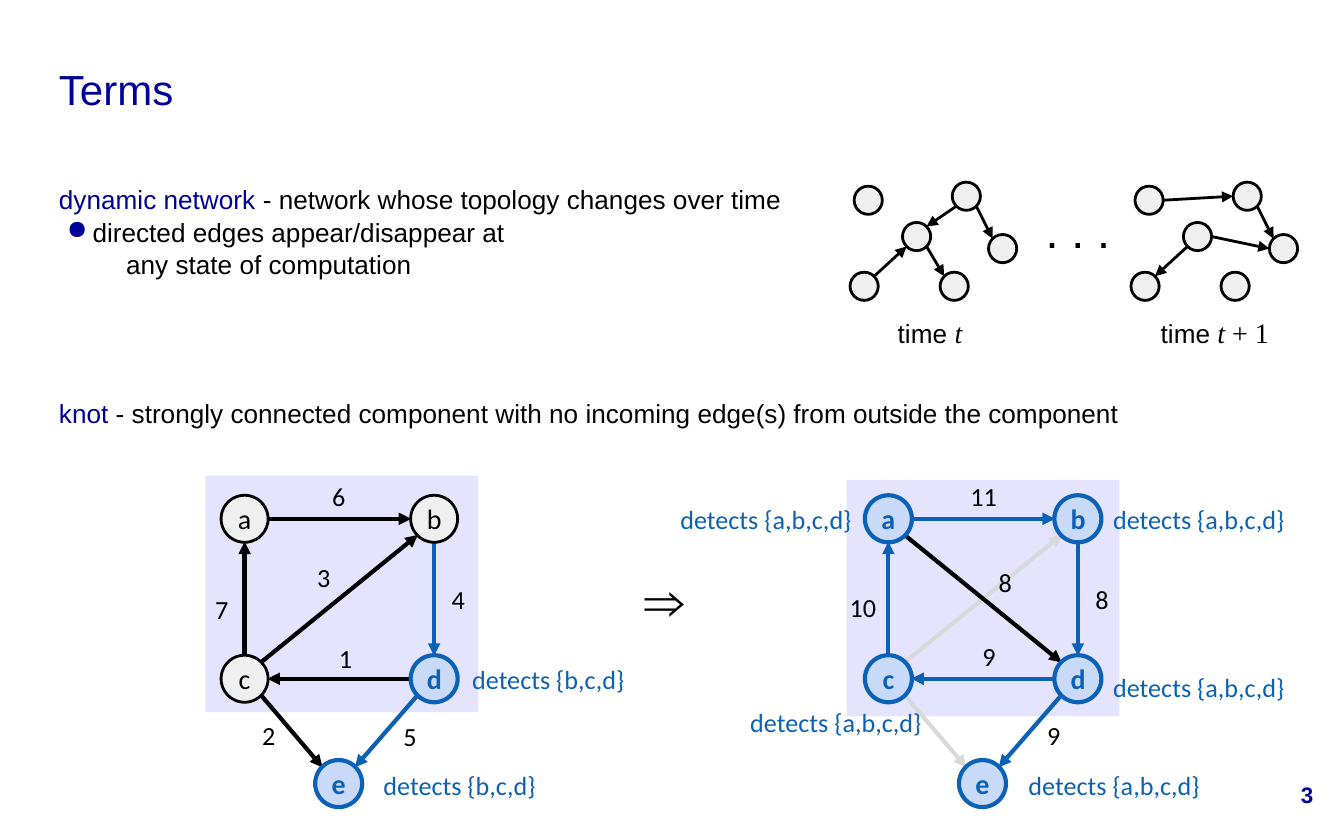
import math

from lxml import etree
from pptx import Presentation
from pptx.dml.color import RGBColor
from pptx.enum.shapes import MSO_CONNECTOR, MSO_SHAPE
from pptx.enum.text import MSO_ANCHOR, PP_ALIGN
from pptx.oxml.ns import qn
from pptx.util import Inches, Pt

OVAL, RECT, STRAIGHT = MSO_SHAPE.OVAL, MSO_SHAPE.RECTANGLE, MSO_CONNECTOR.STRAIGHT
LEFT, CENTER, RIGHT = PP_ALIGN.LEFT, PP_ALIGN.CENTER, PP_ALIGN.RIGHT
TOP, MIDDLE = MSO_ANCHOR.TOP, MSO_ANCHOR.MIDDLE

NAVY, BLACK, BLUE = "000099", "000000", "0B61B5"
GREY, PALE, SKY, LILAC = "D9D9D9", "EFEFEF", "C9DAF8", "E4E4FF"

# Text formats
TITLE = {"name": "Arial", "size": Pt(22.5), "color": NAVY}
TERM = {"name": "Arial", "size": Pt(14), "color": NAVY}
BODY = TERM | {"color": BLACK}
MATH = {"name": "Times New Roman", "size": Pt(15), "color": BLACK}
VARIABLE = MATH | {"italic": True}
DOTS = BODY | {"size": Pt(25)}
IMPLIES = BODY | {"size": Pt(30)}
NUMBER = TERM | {"size": Pt(12), "bold": True}
LABEL = {"name": "Calibri", "size": Pt(14), "color": BLACK}
DETECT = LABEL | {"color": BLUE}
PLAIN_NODE = LABEL | {"size": Pt(15)}
KNOT_NODE = DETECT | {"size": Pt(15), "bold": True}

# Definitions: spans, left margin, first-line indent, bullet, space before in points
DEFINITIONS = [
    ([("dynamic network", TERM), (" - network whose topology changes over time", BODY)], 0, 0, None, 0),
    ([("directed edges appear/disappear at", BODY)], 0.25, -0.19, "●", 0),
    ([("any state of computation", BODY)], 0.5, 0, None, 0),
    ([("knot", TERM), (" - strongly connected component with no incoming edge(s) "
                       "from outside the component", BODY)], 0, 0, None, 62),
]

# Free-standing text: left, top, width, height, spans, alignment, anchor
TEXTS = [
    (0.34, 0.31, 9.32, 0.7, [("Terms", TITLE)], LEFT, MIDDLE),
    (9.27, 5.67, 0.6, 0.48, [("3", NUMBER)], RIGHT, MIDDLE),
    (4.09, 4.16, 1.71, 0.59, [("⇒", IMPLIES)], CENTER, MIDDLE),
    (7.66, 1.4, 0.72, 0.62, [(". . .", DOTS)], CENTER, TOP),
    (6.34, 2.25, 1.16, 0.45, [("time ", BODY), ("t", VARIABLE)], CENTER, TOP),
    (8.46, 2.25, 1.16, 0.45, [("time ", BODY), ("t", VARIABLE), (" + 1", MATH)], CENTER, TOP),
]

# Dynamic network: node offsets, then origin and edges at each time
SNAPSHOT_NODES = {"p": (0, 0), "q": (0.73, -0.03), "r": (0.36, 0.27),
                  "s": (1, 0.36), "u": (-0.03, 0.64), "v": (0.64, 0.64)}
SNAPSHOTS = [((6.46, 1.49), ["rv", "qr", "qs", "ur"]),
             ((8.55, 1.49), ["ru", "pq", "rs", "qs"])]

# Knot graphs: edges and edge labels by centre, "detects" notes by centre
KNOT_NODES = {"a": (0, 0), "b": (1.41, 0), "c": (0, 1.19), "d": (1.41, 1.19), "e": (0.7, 1.97)}
KNOT_GRAPHS = [
    {"origin": (1.82, 3.86), "area": (1.53, 3.54), "knot": "de",
     "edges": {BLACK: ["dc", "ce", "ca", "ab", "cb"], BLUE: ["bd", "de"]},
     "labels": [("1", 2.57, 4.9), ("2", 2, 5.47), ("3", 2.41, 4.29), ("4", 3.41, 4.46),
                ("5", 3.05, 5.48), ("6", 2.52, 3.69), ("7", 1.65, 4.53)],
     "notes": [("detects {b,c,d}", 4.08, 5.05), ("detects {b,c,d}", 3.42, 5.84)]},
    {"origin": (6.61, 3.86), "area": (6.3, 3.57), "knot": "abcde",
     "edges": {GREY: ["cb", "ce"], BLACK: ["ad"], BLUE: ["ab", "bd", "dc", "ca", "de"]},
     "labels": [("8", 8.2, 4.46), ("8", 7.48, 4.33), ("9", 7.36, 4.88), ("9", 7.84, 5.47),
                ("10", 6.42, 4.52), ("11", 7.32, 3.69)],
     "notes": [("detects {a,b,c,d}", x, y) for x, y in
               [(5.7, 3.86), (8.92, 3.86), (8.92, 5.11), (6.22, 5.37), (8.29, 5.84)]]},
]

deck = Presentation()
deck.slide_width, deck.slide_height = Inches(10), Inches(6.25)
page = deck.slides.add_slide(deck.slide_layouts[6])


def rgb(color):
    return RGBColor.from_string(color)


def add_spans(para, spans):
    for text, style in spans:
        span = para.add_run()
        span.text = text
        for key, value in style.items():
            if key == "color":
                span.font.color.rgb = rgb(value)
            else:
                setattr(span.font, key, value)


def set_frame(frame, anchor, side, edge):
    values = {"word_wrap": True, "vertical_anchor": anchor,
              "margin_left": Inches(side), "margin_right": Inches(side),
              "margin_top": Inches(edge), "margin_bottom": Inches(edge)}
    for key, value in values.items():
        setattr(frame, key, value)


def add_text(left, top, width, height, spans, align, anchor, side=0.1, edge=0.1):
    box = page.shapes.add_textbox(*map(Inches, (left, top, width, height)))
    set_frame(box.text_frame, anchor, side, edge)
    para = box.text_frame.paragraphs[0]
    para.alignment = align
    add_spans(para, spans)
    return box


def add_label(text, x, y, width, style):
    add_text(x - width / 2, y - 0.165, width, 0.33, [(text, style)], CENTER, MIDDLE, 0.07, 0.04)


def add_shape(kind, left, top, width, height, fill, line=None, weight=0):
    shape = page.shapes.add_shape(kind, *map(Inches, (left, top, width, height)))
    shape.shadow.inherit = False
    shape.fill.solid()
    shape.fill.fore_color.rgb = rgb(fill)
    if line:
        shape.line.color.rgb = rgb(line)
        shape.line.width = Pt(weight)
    else:
        shape.line.fill.background()
    return shape


def add_node(center, size, fill, line, weight, name="", style=None):
    x, y = center
    node = add_shape(OVAL, x - size / 2, y - size / 2, size, size, fill, line, weight)
    if name:
        set_frame(node.text_frame, MIDDLE, 0.07, 0.04)
        para = node.text_frame.paragraphs[0]
        para.alignment = CENTER
        add_spans(para, [(name, style)])


def add_edge(start, end, radius, color, weight):
    """Arrow between two circles, touching each at its nearest 45-degree point."""
    (x1, y1), (x2, y2) = start, end
    angle = round(math.atan2(y2 - y1, x2 - x1) / (math.pi / 4)) * math.pi / 4
    dx, dy = radius * math.cos(angle), radius * math.sin(angle)
    edge = page.shapes.add_connector(
        STRAIGHT, *map(Inches, (x1 + dx, y1 + dy, x2 - dx, y2 - dy)))
    edge.line.color.rgb = rgb(color)
    edge.line.width = Pt(weight)
    etree.SubElement(edge.line._get_or_add_ln(), qn("a:tailEnd"), type="triangle")
    etree.SubElement(edge._element.spPr, qn("a:effectLst"))


def place(nodes, origin):
    return {name: (origin[0] + x, origin[1] + y) for name, (x, y) in nodes.items()}


# Shaded components go behind everything
for graph in KNOT_GRAPHS:
    add_shape(RECT, *graph["area"], 2.03, 1.76, LILAC)

# Title, page number, symbols and captions
for text in TEXTS:
    add_text(*text)

# Definitions
frame = add_text(0.34, 1.25, 9.32, 2.15, [], LEFT, TOP).text_frame
for index, (spans, margin, indent, bullet, before) in enumerate(DEFINITIONS):
    para = frame.add_paragraph() if index else frame.paragraphs[0]
    para.line_spacing = 1.05
    if before:
        para.space_before = Pt(before)
    props = para._p.get_or_add_pPr()
    props.set("marL", str(Inches(margin)))
    props.set("indent", str(Inches(indent)))
    if bullet:
        tint = etree.SubElement(props, qn("a:buClr"))
        etree.SubElement(tint, qn("a:srgbClr"), val=NAVY)
        etree.SubElement(props, qn("a:buChar"), char=bullet)
    add_spans(para, spans)

# Dynamic network at two times
for origin, edges in SNAPSHOTS:
    centers = place(SNAPSHOT_NODES, origin)
    for center in centers.values():
        add_node(center, 0.21, PALE, BLACK, 1.5)
    for start, end in edges:
        add_edge(centers[start], centers[end], 0.105, BLACK, 1.5)

# Knot graphs
for graph in KNOT_GRAPHS:
    centers = place(KNOT_NODES, graph["origin"])
    for color, edges in graph["edges"].items():
        for start, end in edges:
            add_edge(centers[start], centers[end], 0.17, color, 2.25)
    for name, center in centers.items():
        look = (SKY, BLUE, 2.25, name, KNOT_NODE) if name in graph["knot"] else (
            PALE, BLACK, 1.5, name, PLAIN_NODE)
        add_node(center, 0.35, *look)
    for text, x, y in graph["labels"]:
        add_label(text, x, y, 0.5, LABEL)
    for text, x, y in graph["notes"]:
        add_label(text, x, y, 1.48, DETECT)

deck.save("out.pptx")
